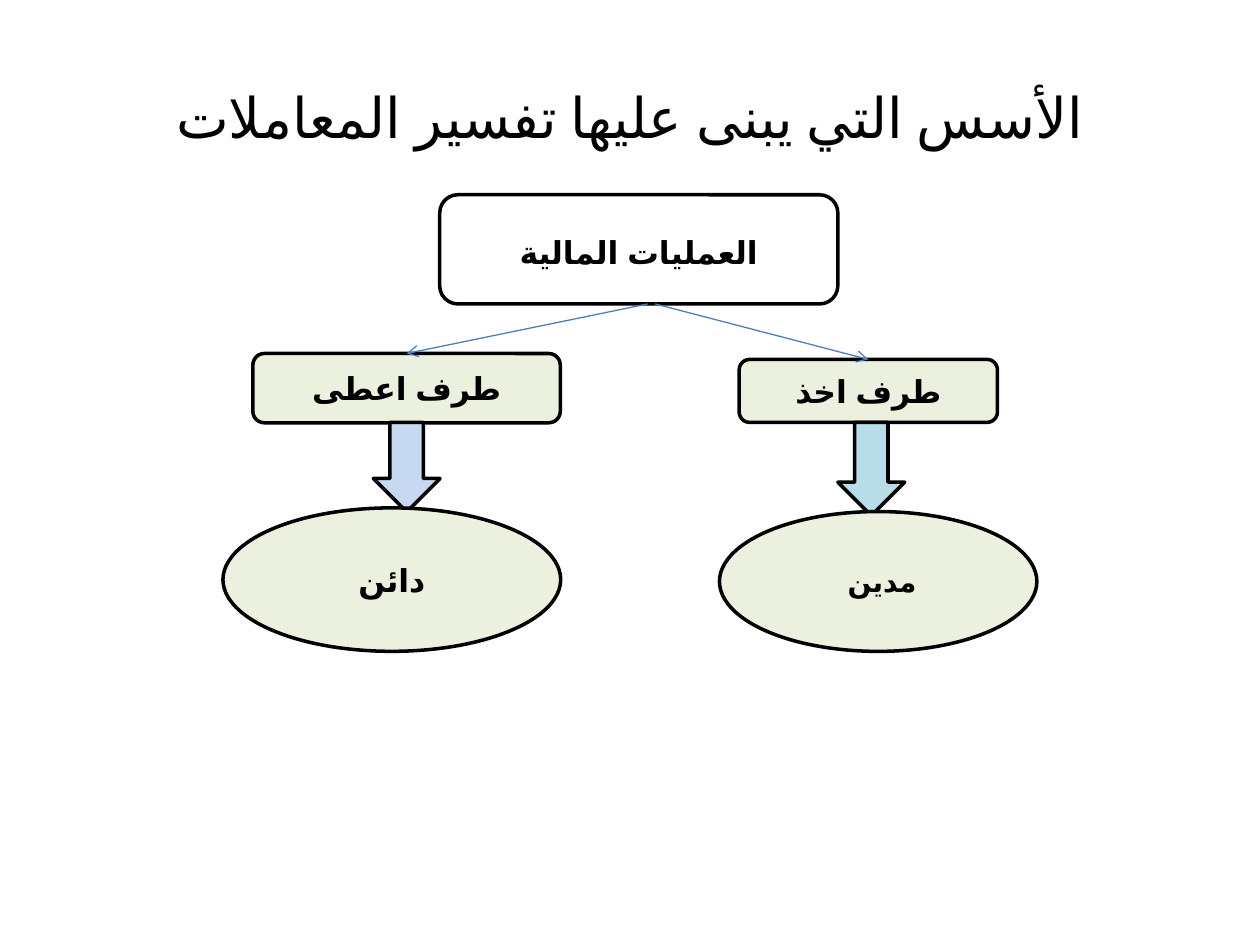
from dataclasses import dataclass

from lxml.etree import SubElement
from pptx import Presentation
from pptx.dml.color import RGBColor
from pptx.enum.lang import MSO_LANGUAGE_ID as Language
from pptx.enum.shapes import MSO_CONNECTOR as Connector, MSO_SHAPE as Preset
from pptx.enum.text import MSO_ANCHOR as Anchor, PP_ALIGN as Align
from pptx.oxml.ns import qn
from pptx.shapes.autoshape import Shape
from pptx.slide import Slide
from pptx.util import Pt

FONT = "Calibri"
TOP = 0
COLORS = {
    "ink": "000000",
    "white": "FFFFFF",
    "green": "EBF1DE",
    "teal": "B7DEE8",
    "blue": "C6D9F1",
    "link": "4B7EBC",
}


@dataclass(frozen=True)
class Node:
    preset: Preset
    left: float
    top: float
    width: float
    height: float
    fill: str
    text: str = ""
    size: float = 18


@dataclass(frozen=True)
class Branch:
    party: Node
    arrow: Node
    account: Node
    link_start: float


OPERATIONS = Node(Preset.ROUNDED_RECTANGLE, 251.3, 111.3, 227.5, 62.4, "white", "العمليات المالية")
BRANCHES = (
    Branch(
        Node(Preset.ROUNDED_RECTANGLE, 422.4, 205.4, 147.6, 36, "green", "طرف اخذ"),
        Node(Preset.DOWN_ARROW, 478.8, 241.4, 38.2, 53.3, "teal"),
        Node(Preset.OVAL, 411.1, 292.3, 181.4, 79.9, "green", "مدين ", 16),
        374.4,
    ),
    Branch(
        Node(Preset.ROUNDED_RECTANGLE, 144.5, 202, 175.7, 39.6, "green", "طرف اعطى"),
        Node(Preset.DOWN_ARROW, 213.3, 241.4, 38.2, 51.1, "blue"),
        Node(Preset.OVAL, 127.4, 290.2, 193, 82, "green", "دائن"),
        370.1,
    ),
)


def color(name: str) -> RGBColor:
    return RGBColor.from_string(COLORS[name])


def write_text(shape: Shape, text: str, size: float, bold: bool) -> None:
    frame = shape.text_frame
    frame.word_wrap = True
    frame.vertical_anchor = Anchor.MIDDLE
    paragraph = frame.paragraphs[0]
    paragraph.text = text
    paragraph.alignment = Align.CENTER
    paragraph._p.get_or_add_pPr().set("rtl", "1")
    paragraph.runs[0].font.language_id = Language.ARABIC
    font = paragraph.font
    font.name = FONT
    font.size = Pt(size)
    font.bold = bold
    font.color.rgb = color("ink")


def draw_node(slide: Slide, node: Node) -> Shape:
    shape = slide.shapes.add_shape(
        node.preset, Pt(node.left), Pt(node.top), Pt(node.width), Pt(node.height)
    )
    shape.shadow.inherit = False
    shape.fill.solid()
    shape.fill.fore_color.rgb = color(node.fill)
    shape.line.color.rgb = color("ink")
    shape.line.width = Pt(2)
    if node.text:
        write_text(shape, node.text, node.size, True)
    return shape


def draw_link(slide: Slide, start: float, target: Shape) -> None:
    bottom = Pt(OPERATIONS.top + OPERATIONS.height)
    connector = slide.shapes.add_connector(
        Connector.STRAIGHT, Pt(start), bottom, target.left + target.width // 2, target.top
    )
    connector.end_connect(target, TOP)
    connector.line.color.rgb = color("link")
    connector.line.width = Pt(0.75)
    SubElement(connector.line._get_or_add_ln(), qn("a:tailEnd"), type="arrow")
    SubElement(connector._element.spPr, qn("a:effectLst"))


def main() -> None:
    presentation = Presentation()
    presentation.slide_width = Pt(720)
    presentation.slide_height = Pt(540)
    slide = presentation.slides.add_slide(presentation.slide_layouts[6])

    title = slide.shapes.add_textbox(Pt(36), Pt(21.6), Pt(648), Pt(90))
    write_text(title, "الأسس التي يبنى عليها تفسير المعاملات", 32, False)

    operations = draw_node(slide, OPERATIONS)
    paragraph = operations.text_frame.paragraphs[0]
    paragraph.line_spacing = 1.15
    paragraph.space_after = Pt(10)

    parties = [draw_node(slide, branch.party) for branch in BRANCHES]
    for branch in BRANCHES:
        draw_node(slide, branch.arrow)
    for branch in BRANCHES:
        draw_node(slide, branch.account)
    for branch, party in zip(BRANCHES, parties):
        draw_link(slide, branch.link_start, party)

    presentation.save("out.pptx")


if __name__ == "__main__":
    main()
